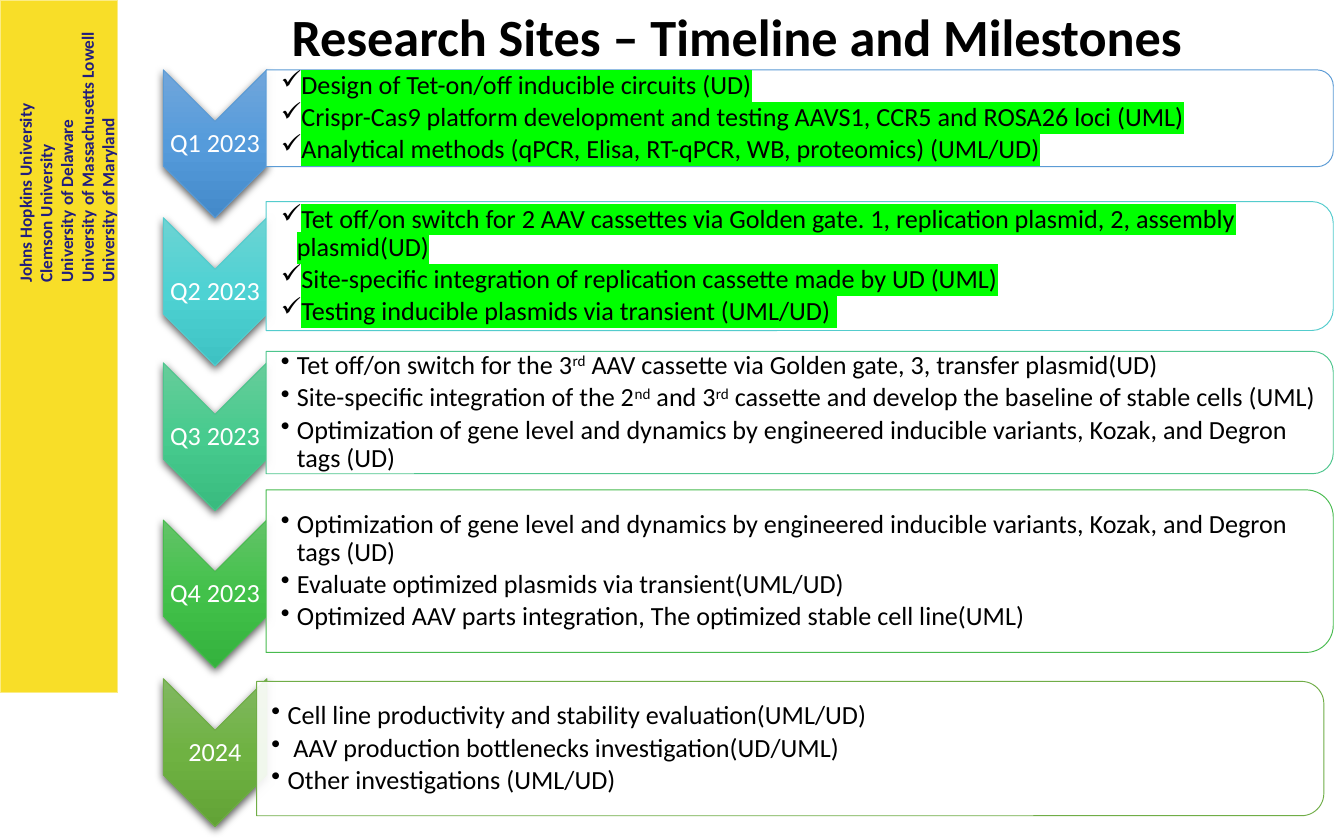
"""Build the slide of research sites with quarterly milestones."""
from lxml import etree
from pptx import Presentation
from pptx.dml.color import RGBColor
from pptx.enum.shapes import MSO_SHAPE
from pptx.enum.text import MSO_ANCHOR, PP_ALIGN
from pptx.oxml import parse_xml
from pptx.oxml.ns import nsdecls, qn
from pptx.util import Inches, Pt

RECT = MSO_SHAPE.RECTANGLE
CHEVRON = MSO_SHAPE.CHEVRON
ROUND = MSO_SHAPE.ROUND_2_SAME_RECTANGLE
TOP, MIDDLE = MSO_ANCHOR.TOP, MSO_ANCHOR.MIDDLE
LEFT, CENTER = PP_ALIGN.LEFT, PP_ALIGN.CENTER

BLACK = RGBColor(0x00, 0x00, 0x00)
WHITE = RGBColor(0xFF, 0xFF, 0xFF)
YELLOW = RGBColor(0xF8, 0xDE, 0x28)
PALE = RGBColor(0xFB, 0xEC, 0x85)
NAVY = RGBColor(0x21, 0x1D, 0x7D)
LIME = RGBColor(0x00, 0xFF, 0x00)
BLUE = RGBColor(0x5B, 0x9B, 0xD5)
CYAN = RGBColor(0x54, 0xCC, 0xCD)
TEAL = RGBColor(0x4D, 0xC5, 0x8D)
GREEN = RGBColor(0x48, 0xBB, 0x4F)
OLIVE = RGBColor(0x70, 0xAD, 0x47)
BLUES = [RGBColor(0x71, 0xA6, 0xDB), RGBColor(0x55, 0x9B, 0xDB), RGBColor(0x44, 0x8A, 0xCA)]
CYANS = [RGBColor(0x6C, 0xD3, 0xD3), RGBColor(0x4E, 0xD2, 0xD3), RGBColor(0x3E, 0xC2, 0xC3)]
TEALS = [RGBColor(0x67, 0xCC, 0x9A), RGBColor(0x47, 0xCB, 0x8E), RGBColor(0x39, 0xBB, 0x7F)]
GREENS = [RGBColor(0x63, 0xC3, 0x68), RGBColor(0x42, 0xC1, 0x4A), RGBColor(0x34, 0xB2, 0x3D)]
OLIVES = [RGBColor(0x81, 0xB8, 0x61), RGBColor(0x6F, 0xB2, 0x42), RGBColor(0x62, 0xA3, 0x36)]

SITES = ["Johns Hopkins University", "Clemson University", "University of Delaware",
         "University of Massachusetts Lowell", "University of Maryland"]
TUNING = ("Optimization of gene level and dynamics by engineered inducible variants, "
          "Kozak, and Degron tags (UD)")

STAGES = [
    ("Q1 2023", True, BLUE, BLUES, 1.07, 1.98, 0.88, 0.72, [
        "Design of Tet-on/off inducible circuits (UD)",
        "Crispr-Cas9 platform development and testing AAVS1, CCR5 and ROSA26 loci (UML)",
        "Analytical methods (qPCR, Elisa, RT-qPCR, WB, proteomics) (UML/UD)"]),
    ("Q2 2023", True, CYAN, CYANS, 2.17, 1.98, 1.98, 0.96, [
        "Tet off/on switch for 2 AAV cassettes via Golden gate. 1, replication plasmid, "
        "2, assembly plasmid(UD)",
        "Site-specific integration of replication cassette made by UD (UML)",
        "Testing inducible plasmids via transient (UML/UD) "]),
    ("Q3 2023", False, TEAL, TEALS, 3.25, 1.98, 3.07, 0.91, [
        "Tet off/on switch for the 3^rd^ AAV cassette via Golden gate, 3, transfer plasmid(UD)",
        "Site-specific integration of the 2^nd^ and 3^rd^ cassette and develop the baseline "
        "of stable cells (UML)",
        TUNING]),
    ("Q4 2023", False, GREEN, GREENS, 4.42, 1.98, 4.25, 1.21, [
        TUNING,
        "Evaluate optimized plasmids via transient(UML/UD)",
        "Optimized AAV parts integration, The optimized stable cell line(UML)"]),
    ("2024", False, OLIVE, OLIVES, 5.6, 1.91, 5.57, 1, [
        "Cell line productivity and stability evaluation(UML/UD)",
        " AAV production bottlenecks investigation(UD/UML)",
        "Other investigations (UML/UD)"]),
]


class Deck:
    """Holds the style and the current slide."""

    font = "Calibri"

    def __init__(self, wide, high):
        self.file = Presentation()
        self.file.slide_width, self.file.slide_height = Inches(wide), Inches(high)
        self.slide = self.file.slides.add_slide(self.file.slide_layouts[6])

    def shape(self, kind, mid, size, fill, line, turn=0):
        (x, y), (w, h) = mid, size
        item = self.slide.shapes.add_shape(
            kind, Inches(x - w / 2), Inches(y - h / 2), Inches(w), Inches(h))
        item.rotation = turn
        item.shadow.inherit = False
        item.fill.solid()
        item.fill.fore_color.rgb = fill
        item.line.color.rgb = line
        item.line.width = Pt(0.5)
        return item

    def arrow(self, mid, line, shades):
        item = self.shape(CHEVRON, mid, (1.1, 0.77), shades[1], line, 90)
        props = item._element.spPr
        stops = "".join(f'<a:gs pos="{n * 50000}"><a:srgbClr val="{c}"/></a:gs>'
                        for n, c in enumerate(shades))
        props.replace(props.find(qn("a:solidFill")), parse_xml(
            f'<a:gradFill {nsdecls("a")} rotWithShape="0"><a:gsLst>{stops}</a:gsLst>'
            '<a:lin ang="5400000" scaled="0"/></a:gradFill>'))
        props.find(qn("a:effectLst")).append(parse_xml(
            f'<a:outerShdw {nsdecls("a")} blurRad="57150" dist="19050" dir="5400000" '
            'algn="ctr" rotWithShape="0"><a:srgbClr val="000000"><a:alpha val="63000"/>'
            '</a:srgbClr></a:outerShdw>'))

    def card(self, mid, size, line):
        item = self.shape(ROUND, mid, size, WHITE, line, 90)
        tint = item._element.spPr.find(qn("a:solidFill"))[0]
        etree.SubElement(tint, qn("a:alpha")).set("val", "90000")

    def box(self, mid, size, pads):
        (x, y), (w, h) = mid, size
        item = self.slide.shapes.add_textbox(
            Inches(x - w / 2), Inches(y - h / 2), Inches(w), Inches(h))
        frame = item.text_frame
        frame.word_wrap = True
        (frame.margin_left, frame.margin_top,
         frame.margin_right, frame.margin_bottom) = map(Inches, pads)
        return frame

    def words(self, frame, lines, size, color, bold=False, align=LEFT, anchor=TOP,
              lead=None, bullet=None, mark=None):
        frame.vertical_anchor = anchor
        for n, line in enumerate(lines):
            para = frame.add_paragraph() if n else frame.paragraphs[0]
            para.alignment = align
            if lead:
                para.line_spacing = lead
            if bullet:
                self.bullet(para, bullet)
            for odd, text in enumerate(line.split("^")):
                run = para.add_run()
                run.text = text
                face = run.font
                face.name, face.size, face.bold = self.font, Pt(size), bold
                face.color.rgb = color
                props = run._r.get_or_add_rPr()
                if odd % 2:
                    props.set("baseline", "30000")
                if mark:
                    props.find(qn("a:solidFill")).addnext(parse_xml(
                        f'<a:highlight {nsdecls("a")}><a:srgbClr val="{mark}"/></a:highlight>'))

    def bullet(self, para, sign):
        para.space_after = Pt(2.1)
        props = para._p.get_or_add_pPr()
        props.set("marL", str(Inches(0.12)))
        props.set("indent", str(-Inches(0.12)))
        etree.SubElement(props, qn("a:buChar")).set("char", sign)


def main():
    deck = Deck(10, 6.25)
    deck.shape(RECT, (0.44, 2.58), (0.87, 5.15), YELLOW, PALE)
    side = deck.shape(RECT, (0.44, 1.16), (2.08, 0.76), YELLOW, YELLOW, 270)
    side.line.fill.background()
    side.text_frame.word_wrap = False
    deck.words(side.text_frame, SITES, 9.2, NAVY, bold=True)

    for label, done, line, shades, y, left, mid, high, goals in STAGES:
        deck.arrow((1.6, y), line, shades)
        tag = deck.box((1.6, y), (0.77, 0.33), [0.01] * 4)
        deck.words(tag, [label], 14, WHITE, align=CENTER, anchor=MIDDLE, lead=0.9)
        deck.card((left + 3.97, mid), (high, 7.94), line)
        wide = 7.94 - 0.05 * high
        body = deck.box((left + wide / 2, mid), (wide, 0.9 * high), (0.11, 0.01, 0.01, 0.01))
        deck.words(body, goals, 14, BLACK, anchor=MIDDLE, lead=0.9,
                   bullet="✓" if done else "•", mark=LIME if done else None)

    title = deck.box((5.48, 0.27), (7.88, 0.57), (0.1, 0.05, 0.1, 0.05))
    deck.words(title, ["Research Sites – Timeline and Milestones"], 28, BLACK,
               bold=True, align=CENTER)
    deck.file.save("out.pptx")


if __name__ == "__main__":
    main()
